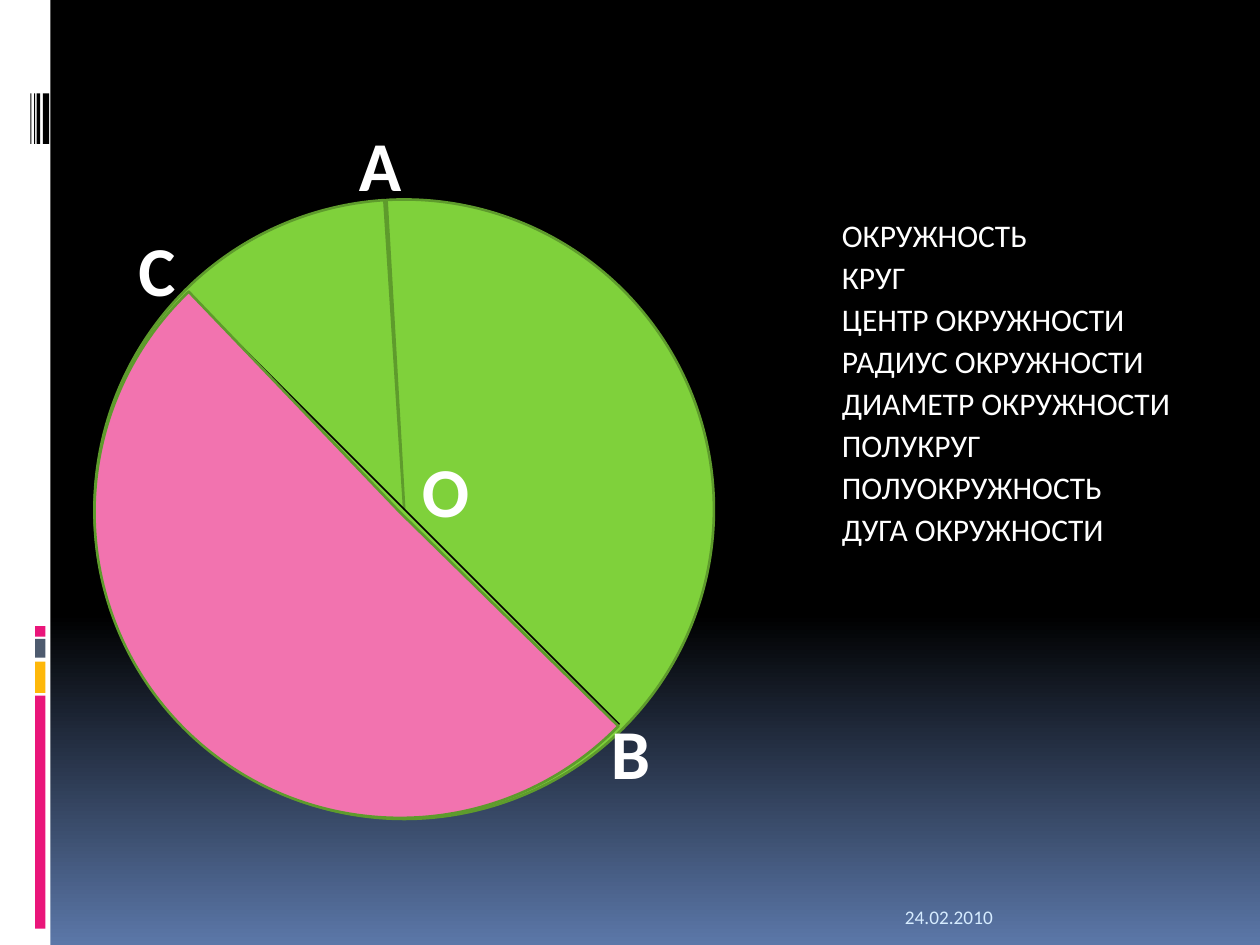
import copy

import pptx
import pptx.dml.color
import pptx.enum.shapes
import pptx.enum.text
import pptx.oxml.ns
import pptx.util
import lxml.etree

THEME = {
    "font": "Calibri", "letter": 40, "term": 18, "date": 11,
    "white": "FFFFFF", "black": "000000", "blue": "5B77A8", "pale": "D6ECFF",
    "magenta": "EA157A", "amber": "FEB80A", "slate": "4E5B6F",
    "green": "7FD13B", "outline": "5E9B2C", "pink": "F273AF",
}
KINDS = pptx.enum.shapes.MSO_SHAPE

presentation = pptx.Presentation()
presentation.slide_width = pptx.util.Inches(10)
presentation.slide_height = pptx.util.Inches(7.5)
slide = presentation.slides.add_slide(presentation.slide_layouts[6])
CELL = presentation.slide_width / 120


def add_text(text, left, top, width, height, size, color="white", bold=False, fit=True):
    box = slide.shapes.add_textbox(*[round(n * CELL) for n in (left, top, width, height)])
    frame = box.text_frame
    frame.word_wrap = True
    if fit:
        frame.auto_size = pptx.enum.text.MSO_AUTO_SIZE.SHAPE_TO_FIT_TEXT
    else:
        frame.vertical_anchor = pptx.enum.text.MSO_ANCHOR.BOTTOM
    paragraph = frame.paragraphs[0]
    paragraph.text = text
    font = paragraph.runs[0].font
    font.name = THEME["font"]
    font.size = pptx.util.Pt(THEME[size])
    font.bold = bold
    font.color.rgb = pptx.dml.color.RGBColor.from_string(THEME[color])


def add_figure(kind, left, top, width, height, color, outline=None):
    shape = slide.shapes.add_shape(kind, *[round(n * CELL) for n in (left, top, width, height)])
    shape.shadow.inherit = False
    shape.fill.solid()
    shape.fill.fore_color.rgb = pptx.dml.color.RGBColor.from_string(THEME[color])
    if outline:
        shape.line.color.rgb = pptx.dml.color.RGBColor.from_string(THEME[outline])
        shape.line.width = pptx.util.Pt(1.5)
    else:
        shape.line.fill.background()
    return shape


background = slide.background.fill
background.gradient()
background.gradient_angle = 270
for stop, position, color in zip(background.gradient_stops, (0.65, 1), ("black", "blue")):
    stop.position = position
    stop.color.rgb = pptx.dml.color.RGBColor.from_string(THEME[color])
stop_list = slide.element.xpath(".//a:gsLst")[0]
first_stop = copy.deepcopy(stop_list[0])
first_stop.set("pos", "0")
stop_list.insert(0, first_stop)

add_figure(KINDS.RECTANGLE, 0, 0, 4.8, 90, "white")
for top, height, color in [(66.24, 22.2, "magenta"), (63, 3, "amber"),
                           (60.84, 1.8, "slate"), (59.64, 1, "magenta")]:
    add_figure(KINDS.RECTANGLE, 3.34, top, 1, height, color)
for left, width in [(4.08, 0.6), (3.48, 0.36), (3.24, 0.12), (2.88, 0.12)]:
    add_figure(KINDS.RECTANGLE, left, 8.9, width, 4.8, "black")

circle = add_figure(KINDS.PIE, 9, 19, 59, 59, "green", "outline")
circle.adjustments[0] = 160.04
circle.adjustments[1] = 159.8

diameter = slide.shapes.add_connector(
    pptx.enum.shapes.MSO_CONNECTOR.STRAIGHT, *[round(n * CELL) for n in (18, 28, 59, 69)])
diameter.line.color.rgb = pptx.dml.color.RGBColor.from_string(THEME["black"])
diameter.line.width = pptx.util.Pt(0.94)
lxml.etree.SubElement(diameter.element.spPr, pptx.oxml.ns.qn("a:effectLst"))

for letter, left, top, width in [("О", 39, 42, 7), ("A", 33, 11, 12),
                                 ("B", 57, 67, 14), ("C", 12, 21, 7)]:
    add_text(letter, left, top, width, 9.24, size="letter", bold=True)

terms = [("ОКРУЖНОСТЬ", 24), ("КРУГ", 28), ("ЦЕНТР ОКРУЖНОСТИ", 33),
         ("РАДИУС ОКРУЖНОСТИ", 34), ("ДИАМЕТР ОКРУЖНОСТИ", 37), ("ПОЛУКРУГ", 25),
         ("ПОЛУОКРУЖНОСТЬ", 34), ("ДУГА ОКРУЖНОСТИ", 35)]
for row, (term, width) in enumerate(terms):
    add_text(term, 79, 20 + 4 * row, width, 4.85, size="term")

semicircle = add_figure(KINDS.PIE, 9, 19.7, 58.2, 58.2, "pink", "outline")
semicircle.rotation = 44.4
semicircle.adjustments[0] = 0
semicircle.adjustments[1] = 109.1

add_text("24.02.2010", 85, 84.25, 28, 4.8, size="date", color="pale", fit=False)

presentation.save("out.pptx")
